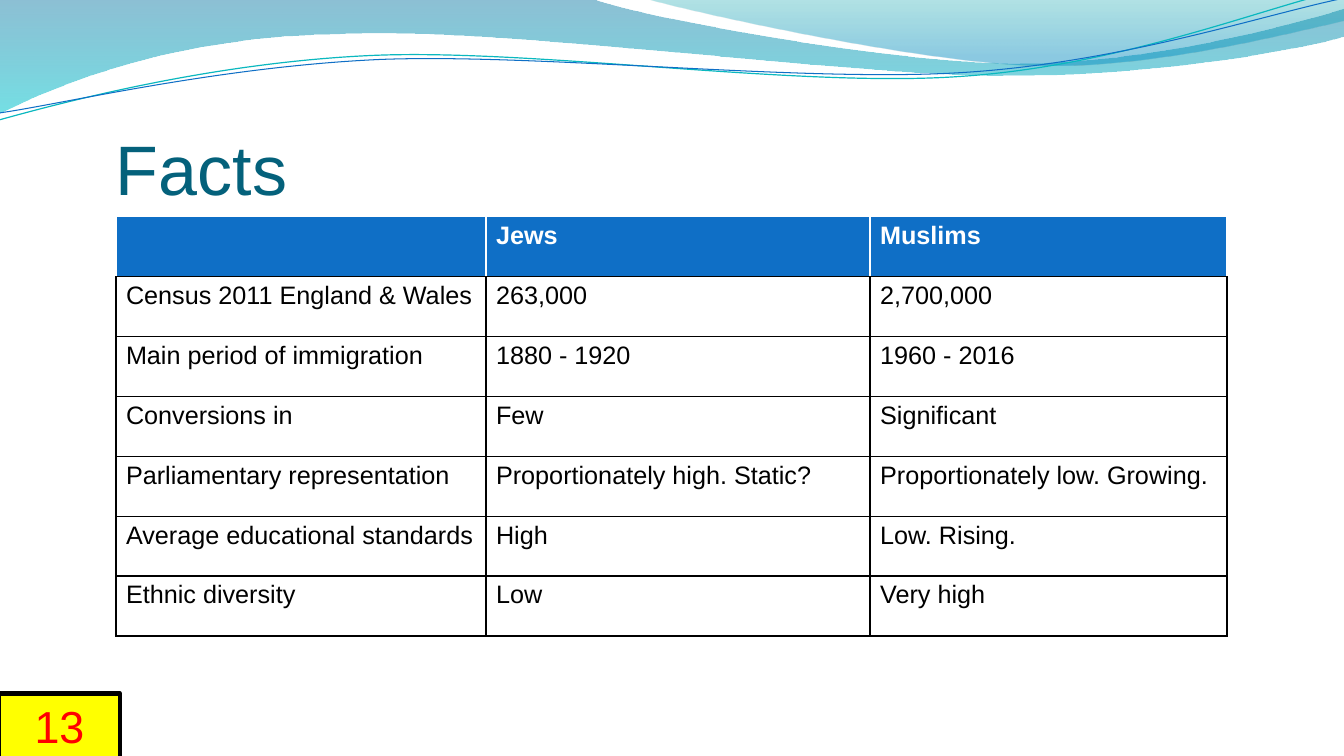
from dataclasses import dataclass

from lxml import etree
from pptx import Presentation
from pptx.dml.color import RGBColor
from pptx.enum.shapes import MSO_SHAPE
from pptx.enum.text import MSO_ANCHOR, PP_ALIGN
from pptx.oxml.ns import qn
from pptx.util import Inches, Pt

RECT = MSO_SHAPE.RECTANGLE
TOP, MIDDLE, BOTTOM = MSO_ANCHOR.TOP, MSO_ANCHOR.MIDDLE, MSO_ANCHOR.BOTTOM
LEFT, CENTER = PP_ALIGN.LEFT, PP_ALIGN.CENTER
FONT = "Arial"
COLORS = {
    "white": "FFFFFF", "black": "000000", "blue": "0F6FC6", "title": "04617B",
    "yellow": "FFFF00", "red": "FF0000", "aqua": "0AB8BF", "deep": "0074A1",
    "cyan": "00C6CF", "teal": "00A1A9", "sky": "008BBF",
}


@dataclass
class Stop:
    place: float
    color: str
    alpha: int


@dataclass
class Wave:
    """An outline; a step of one point is a line, of three points a curve."""
    start: tuple[float, float]
    steps: list[list[tuple[float, float]]]
    stops: tuple[Stop, ...] = ()
    color: str = ""
    width: float = 0


WAVES = [
    Wave((0, 0), [
        [(5.87, -0.01)],
        [(6.34, 0.17), (8.85, 0.63), (10.11, 0.63)],
        [(11.38, 0.63), (12.78, 0.26), (13.33, 0.09)],
        [(13.35, 0.36)],
        [(13.11, 0.44), (11.6, 0.76), (9.94, 0.75)],
        [(8.29, 0.75), (5.09, 0.28), (3.43, 0.34)],
        [(1.72, 0.36), (0.61, 0.83), (-0.01, 1.13)],
    ], stops=(Stop(0, "deep", 45), Stop(1, "cyan", 55))),
    Wave((6.39, -0.01), [
        [(6.79, 0.11), (9.09, 0.62), (10.25, 0.65)],
        [(11.41, 0.69), (12.82, 0.32), (13.33, 0.21)],
        [(13.33, 0)],
    ], stops=(Stop(0, "teal", 30), Stop(0.8, "sky", 45))),
    Wave((-0.01, 1.19), [
        [(0.64, 1.01), (2.11, 0.62), (3.69, 0.55)],
        [(5.27, 0.48), (7.9, 0.87), (9.5, 0.76)],
        [(11.1, 0.66), (12.52, 0.08), (13.31, -0.1)],
    ], color="aqua", width=0.85),
    Wave((0, 1.12), [
        [(0.63, 1.03), (2.18, 0.66), (3.78, 0.59)],
        [(5.37, 0.53), (7.96, 0.82), (9.55, 0.72)],
        [(11.15, 0.62), (12.55, 0.14), (13.34, -0.02)],
    ], color="blue", width=0.75),
]

WIDTHS = [3.67, 3.81, 3.54]
HEIGHT = 4.16
FACTS = [
    ("", "Jews", "Muslims"),
    ("Census 2011 England & Wales", "263,000", "2,700,000"),
    ("Main period of immigration", "1880 - 1920", "1960 - 2016"),
    ("Conversions in", "Few", "Significant"),
    ("Parliamentary representation", "Proportionately high. Static?",
     "Proportionately low. Growing."),
    ("Average educational standards", "High", "Low. Rising."),
    ("Ethnic diversity", "Low", "Very high"),
]


def rgb(name: str) -> RGBColor:
    return RGBColor.from_string(COLORS[name])


def write(frame, text: str, *, size: float, color: str, bold: bool = False,
          align=LEFT, anchor=TOP) -> None:
    frame.word_wrap = True
    frame.vertical_anchor = anchor
    para = frame.paragraphs[0]
    para.alignment = align
    para.font.size = Pt(size)
    if text:
        run = para.add_run()
        run.text = text
        font = run.font
        font.name, font.size, font.bold = FONT, Pt(size), bold
        font.color.rgb = rgb(color)


def bend(shape, steps: list[list[tuple[float, float]]]) -> None:
    """Turn each run of three line segments into one Bezier curve."""
    lines = iter(list(shape._element.iter(qn("a:lnTo"))))
    for step in steps:
        group = [next(lines) for _ in step]
        if len(group) == 3:
            curve = etree.Element(qn("a:cubicBezTo"))
            group[0].addprevious(curve)
            for line in group:
                curve.append(line[0])
                line.getparent().remove(line)


def shade(shape, stops: tuple[Stop, ...]) -> None:
    """Fill from top to bottom with translucent colours."""
    shape.fill.gradient()
    shape.fill.gradient_angle = 270
    for stop, item in zip(shape.fill.gradient_stops, stops):
        stop.position = item.place
        stop.color.rgb = rgb(item.color)
    for tint, item in zip(shape._element.spPr.iter(qn("a:srgbClr")), stops):
        etree.SubElement(tint, qn("a:alpha"), val=str(item.alpha * 1000))


def draw_wave(slide, wave: Wave) -> None:
    x, y = wave.start
    pen = slide.shapes.build_freeform(Inches(x), Inches(y))
    points = [(Inches(a), Inches(b)) for step in wave.steps for a, b in step]
    pen.add_line_segments(points, close=bool(wave.stops))
    shape = pen.convert_to_shape()
    shape.shadow.inherit = False
    bend(shape, wave.steps)
    if wave.stops:
        shade(shape, wave.stops)
        shape.line.fill.background()
    else:
        shape.fill.background()
        shape.line.color.rgb = rgb(wave.color)
        shape.line.width = Pt(wave.width)


def edge(cell, side: str, color: str) -> None:
    props = cell._tc.get_or_add_tcPr()
    line = etree.SubElement(props, qn(f"a:ln{side}"), w=str(Pt(1)))
    fill = etree.SubElement(line, qn("a:solidFill"))
    etree.SubElement(fill, qn("a:srgbClr"), val=COLORS[color])


def draw_table(slide) -> None:
    table = slide.shapes.add_table(
        len(FACTS), len(WIDTHS), Inches(1.15), Inches(2.15),
        Inches(sum(WIDTHS)), Inches(HEIGHT)).table
    table.horz_banding = False
    for col, width in zip(table.columns, WIDTHS):
        col.width = Inches(width)
    for r, row in enumerate(FACTS):
        head = r == 0
        for c, text in enumerate(row):
            cell = table.cell(r, c)
            for side in "LRTB":
                edge(cell, side, "white" if head and side != "B" else "black")
            if head:
                cell.fill.solid()
                cell.fill.fore_color.rgb = rgb("blue")
            else:
                cell.fill.background()
            write(cell.text_frame, text, size=18, bold=head,
                  color="white" if head else "black")


def draw_title(slide) -> None:
    box = slide.shapes.add_textbox(
        Inches(1.15), Inches(0.83), Inches(11.02), Inches(1.25))
    frame = box.text_frame
    frame.margin_left = frame.margin_right = frame.margin_bottom = 0
    write(frame, "Facts", size=50, color="title", anchor=BOTTOM)


def draw_number(slide) -> None:
    box = slide.shapes.add_shape(
        RECT, Inches(-0.01), Inches(6.88), Inches(1.2), Inches(0.64))
    box.shadow.inherit = False
    box.fill.solid()
    box.fill.fore_color.rgb = rgb("yellow")
    box.line.color.rgb = rgb("black")
    box.line.width = Pt(3)
    write(box.text_frame, "13", size=32, color="red",
          align=CENTER, anchor=MIDDLE)


def main() -> None:
    deck = Presentation()
    deck.slide_width, deck.slide_height = Inches(13.33), Inches(7.5)
    slide = deck.slides.add_slide(deck.slide_layouts[6])
    for wave in WAVES:
        draw_wave(slide, wave)
    draw_title(slide)
    draw_table(slide)
    draw_number(slide)
    deck.save("out.pptx")


if __name__ == "__main__":
    main()
